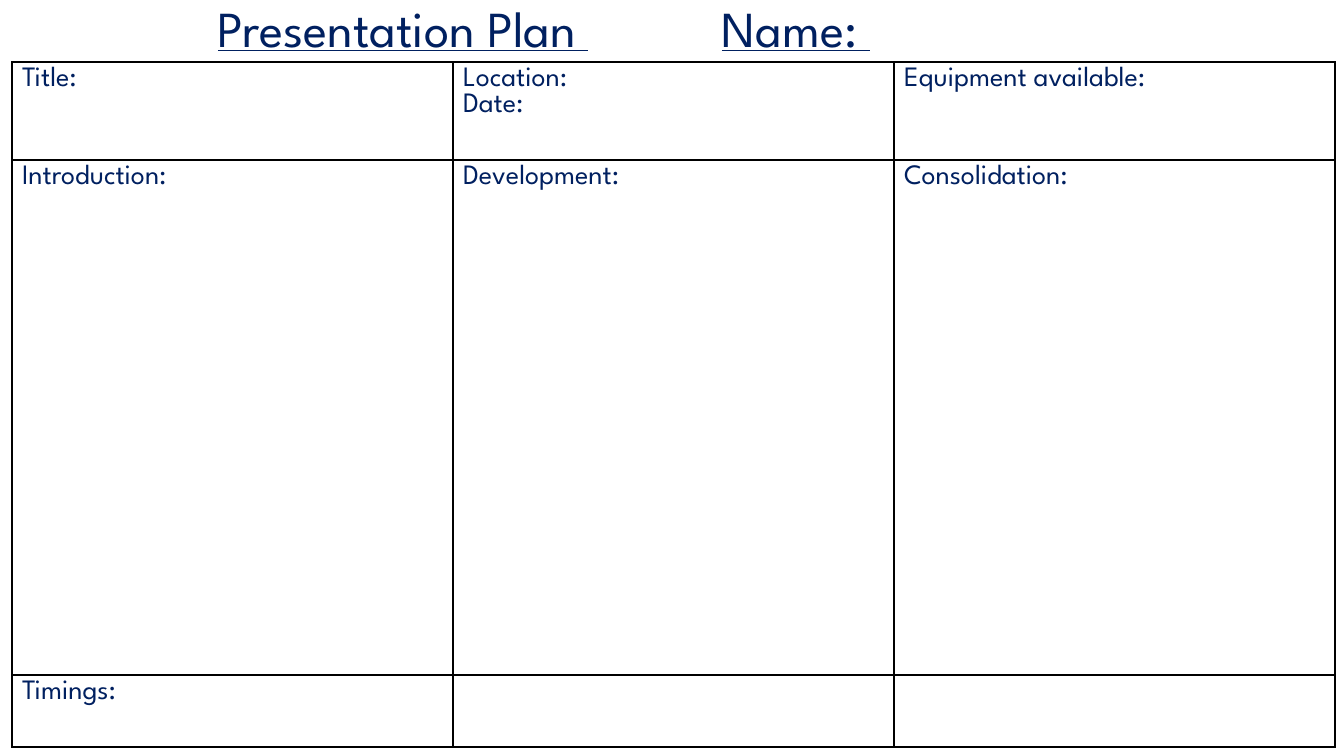
from lxml.etree import SubElement
from pptx import Presentation
from pptx.dml.color import RGBColor
from pptx.enum.text import MSO_ANCHOR
from pptx.oxml import parse_xml
from pptx.oxml.ns import nsdecls, qn
from pptx.util import Pt

SCALE = 914400 / 100.8
NAVY = "002060"
FONT = "League Spartan"


def px(length):
    return round(length * SCALE)


def format_run(run, color, **values):
    for name, value in values.items():
        setattr(run.font, name, value)
    run.font.color.rgb = RGBColor.from_string(color)


presentation = Presentation()
presentation.slide_width = px(1344)
presentation.slide_height = px(756)
slide = presentation.slides.add_slide(presentation.slide_layouts[6])

title_frame = slide.shapes.add_textbox(px(93), 0, px(1159), px(62)).text_frame
title_format = {
    "word_wrap": True,
    "vertical_anchor": MSO_ANCHOR.MIDDLE,
    "margin_left": px(125),
    "margin_right": 0,
    "margin_top": 0,
    "margin_bottom": 0,
}
for name, value in title_format.items():
    setattr(title_frame, name, value)
paragraph = title_frame.paragraphs[0]
paragraph.line_spacing = 0.9
tab_list = SubElement(paragraph._p.get_or_add_pPr(), qn("a:tabLst"))
SubElement(tab_list, qn("a:tab"), pos=str(px(504)), algn="l")
for text, underline in [("Presentation Plan ", True), ("\t", False), ("Name: ", True)]:
    run = paragraph.add_run()
    run.text = text
    format_run(run, NAVY, name=FONT, size=Pt(36), underline=underline)

plan = [
    ["Title:", "Location:\nDate:", "Equipment available:"],
    ["Introduction:", "Development:", "Consolidation:"],
    ["Timings:", "", ""],
]
row_heights = [98, 515, 72]
column_width = 441

table = slide.shapes.add_table(
    len(plan), 3, px(12), px(62), px(3 * column_width), px(sum(row_heights))
).table
table.first_row = False
table.horz_banding = False
for column in table.columns:
    column.width = px(column_width)

for row, height, texts in zip(table.rows, row_heights, plan):
    row.height = px(height)
    for cell, text in zip(row.cells, texts):
        cell.text = text
        cell.fill.background()
        for paragraph in cell.text_frame.paragraphs:
            for run in paragraph.runs:
                format_run(run, NAVY, name=FONT, size=Pt(20))
        properties = cell._tc.get_or_add_tcPr()
        for position, side in enumerate(["lnL", "lnR", "lnT", "lnB"]):
            border = parse_xml(
                f'<a:{side} {nsdecls("a")} w="{Pt(1)}"><a:solidFill>'
                f'<a:srgbClr val="000000"/></a:solidFill></a:{side}>'
            )
            properties.insert(position, border)

presentation.save("out.pptx")
